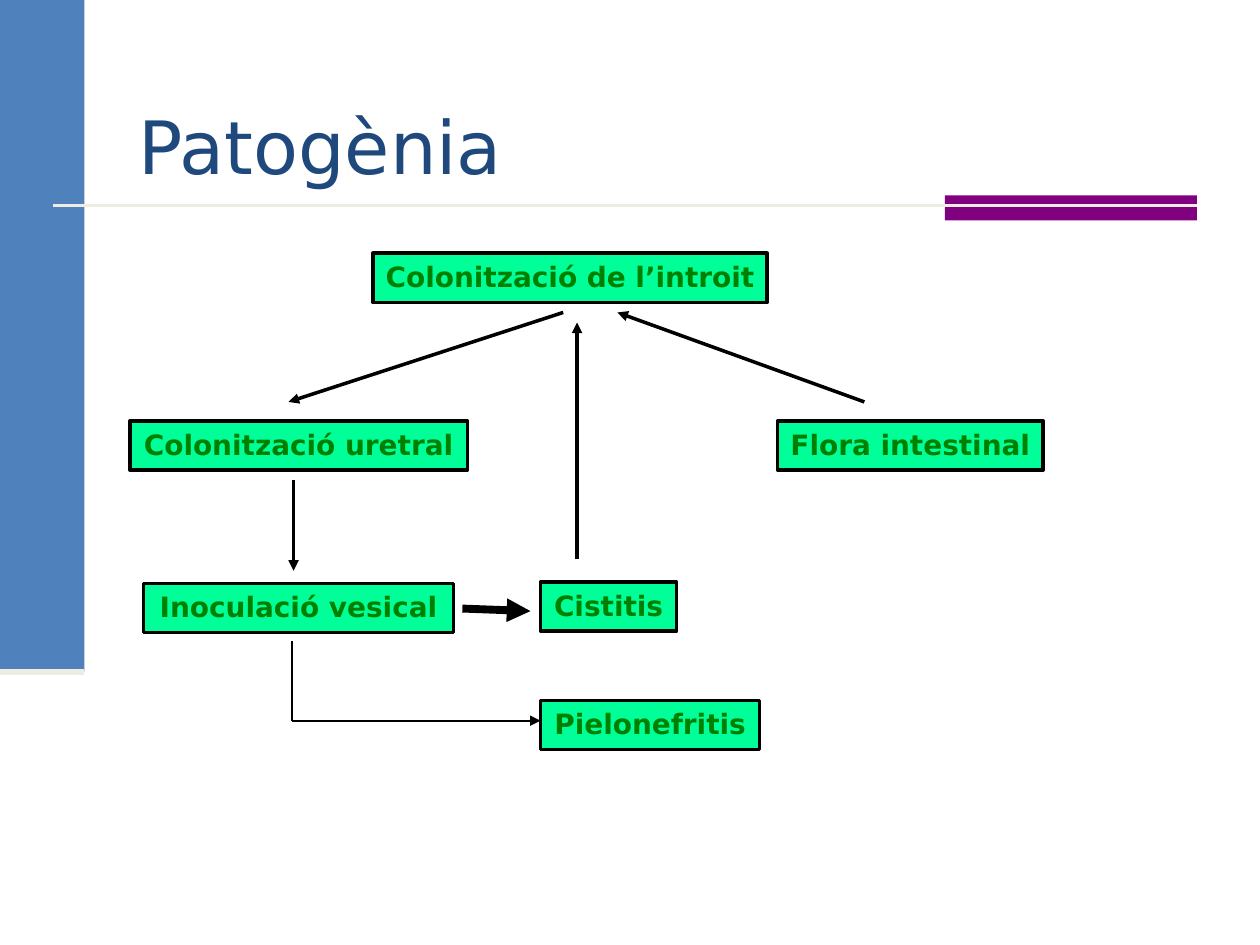
from lxml import etree
from pptx import Presentation
from pptx.dml.color import RGBColor
from pptx.enum.shapes import MSO_CONNECTOR as CONN, MSO_SHAPE as SHAPE
from pptx.enum.text import MSO_ANCHOR as ANCHOR, PP_ALIGN as ALIGN
from pptx.oxml.ns import qn
from pptx.util import Inches, Pt

FONT = "DejaVu Sans"
BLUE = RGBColor(0x4F, 0x81, 0xBD)
NAVY = RGBColor(0x1F, 0x49, 0x7D)
PURPLE = RGBColor(0x80, 0x00, 0x80)
CREAM = RGBColor(0xEE, 0xEC, 0xE1)
MINT = RGBColor(0x00, 0xFF, 0x99)
GREEN = RGBColor(0x00, 0x80, 0x00)
BLACK = RGBColor(0x00, 0x00, 0x00)

BOX_HEIGHT = 0.39
# text, left, top, width
BOXES = [
    ("Colonització de l’introit", 2.96, 2.01, 3.13),
    ("Colonització uretral", 1.03, 3.34, 2.68),
    ("Flora intestinal", 6.17, 3.34, 2.11),
    ("Cistitis", 4.29, 4.62, 1.08),
    ("Inoculació vesical", 1.14, 4.63, 2.46),
    ("Pielonefritis", 4.29, 5.56, 1.74),
]
# start, end, width in points, arrowhead at the end
LINKS = [
    ((4.47, 2.48), (2.29, 3.19), 2, True),   # introit to uretral
    ((6.86, 3.19), (4.9, 2.48), 2, True),    # flora to introit
    ((2.33, 3.81), (2.33, 4.53), 2, True),   # uretral to vesical
    ((4.58, 4.44), (4.58, 2.56), 2, True),   # cistitis to introit
    ((3.67, 4.83), (4.21, 4.85), 4.5, True),  # vesical to cistitis
    ((2.32, 5.09), (2.32, 5.72), 1, False),  # vesical to pielonefritis
    ((2.32, 5.72), (4.29, 5.72), 1, True),
]


def add_rect(slide, box, fill):
    s = slide.shapes.add_shape(SHAPE.RECTANGLE, *map(Inches, box))
    s.shadow.inherit = False
    s.fill.solid()
    s.fill.fore_color.rgb = fill
    s.line.fill.background()
    return s


def add_line(slide, start, end, color, width, arrow=False):
    c = slide.shapes.add_connector(CONN.STRAIGHT, *map(Inches, start + end))
    c.line.color.rgb = color
    c.line.width = Pt(width)
    if arrow:
        etree.SubElement(c.line._get_or_add_ln(), qn("a:tailEnd"), type="triangle")
    etree.SubElement(c._element.spPr, qn("a:effectLst"))


def add_frame(slide):
    """Side band, accent bar and the rules that cross them."""
    add_rect(slide, (0, 0, 0.67, 5.33), BLUE)
    add_rect(slide, (7.5, 1.55, 2, 0.2), PURPLE)
    add_line(slide, (0.42, 1.63), (9.5, 1.63), CREAM, 1.5)
    add_line(slide, (0, 5.33), (0.67, 5.33), CREAM, 3.5)


def set_title(slide, text, box):
    title = slide.shapes.title
    title.left, title.top, title.width, title.height = map(Inches, box)
    tf = title.text_frame
    tf.text = text
    tf.vertical_anchor = ANCHOR.BOTTOM
    p = tf.paragraphs[0]
    p.alignment = ALIGN.LEFT
    p.font.name, p.font.size = FONT, Pt(42)
    p.font.color.rgb = NAVY


def add_step(slide, text, box):
    s = add_rect(slide, box, MINT)
    s.line.color.rgb = BLACK
    s.line.width = Pt(2)
    tf = s.text_frame
    tf.word_wrap = False
    tf.vertical_anchor = ANCHOR.TOP
    tf.text = text
    p = tf.paragraphs[0]
    p.alignment = ALIGN.CENTER
    p.font.name, p.font.size, p.font.bold = FONT, Pt(16), True
    p.font.color.rgb = GREEN


def add_flow(slide):
    for text, left, top, width in BOXES:
        add_step(slide, text, (left, top, width, BOX_HEIGHT))
    for start, end, width, arrow in LINKS:
        add_line(slide, start, end, BLACK, width, arrow)


def main():
    prs = Presentation()
    prs.slide_width, prs.slide_height = Inches(10), Inches(7.5)
    slide = prs.slides.add_slide(prs.slide_layouts[5])
    add_frame(slide)
    set_title(slide, "Patogènia", (1, 0.3, 8.5, 1.25))
    add_flow(slide)
    prs.save("out.pptx")


if __name__ == "__main__":
    main()
